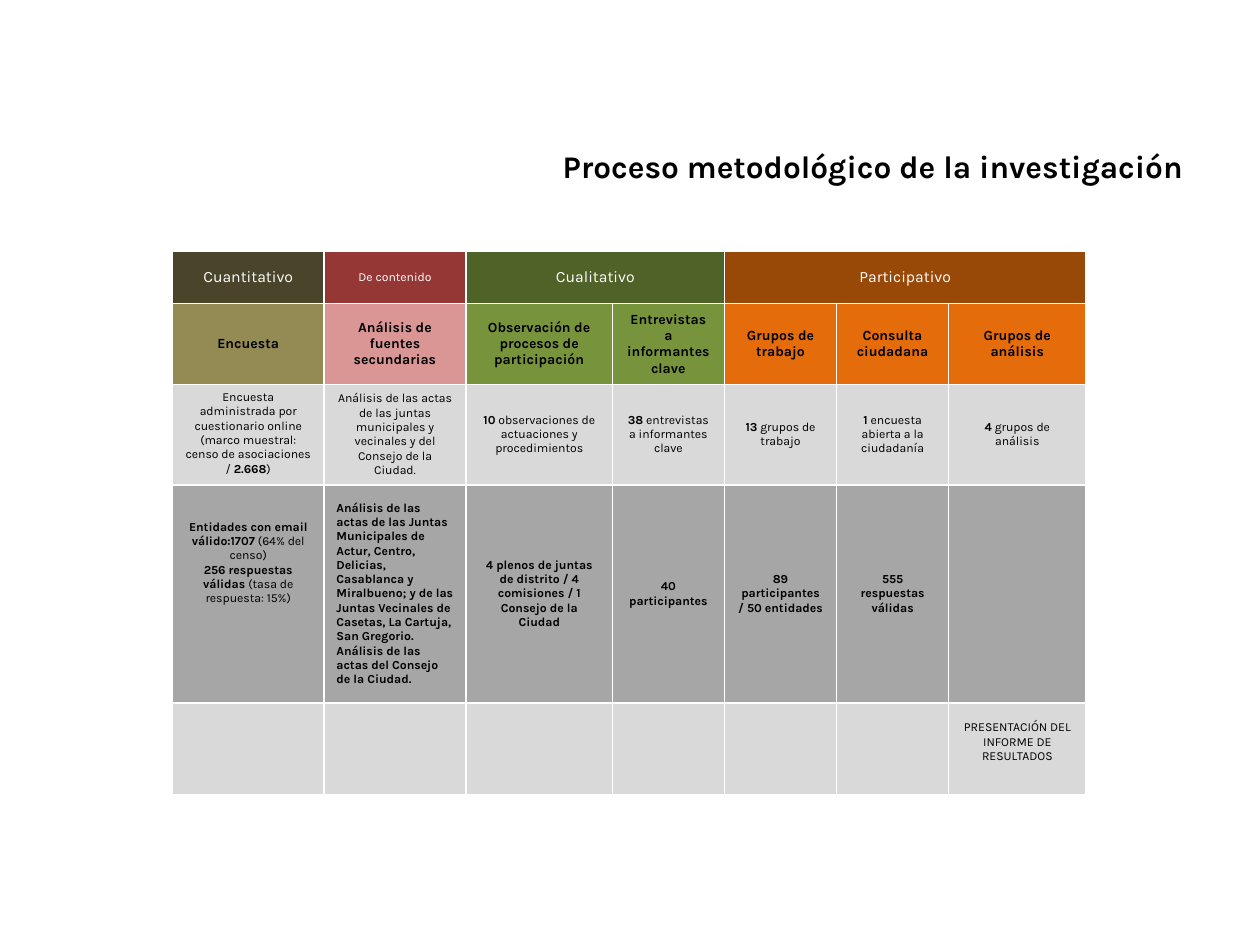
"""Build the slide on the methodological process of the research."""
from dataclasses import dataclass
from itertools import accumulate

from lxml.etree import SubElement
from pptx import Presentation
from pptx.dml.color import RGBColor
from pptx.enum.text import MSO_ANCHOR as Anchor, MSO_AUTO_SIZE as AutoSize, PP_ALIGN as Align
from pptx.oxml.ns import qn
from pptx.util import Inches, Pt


@dataclass(frozen=True)
class Theme:
    font: str = "Karla"
    ink: str = "000000"
    white: str = "FFFFFF"
    light: str = "D9D9D9"
    dark: str = "A6A6A6"
    title: int = 18
    phase: int = 9
    method: int = 8
    body: int = 7
    border: int = 1


@dataclass(frozen=True)
class Entry:
    text: str = ""
    fill: str = Theme.light
    size: int = Theme.body
    color: str = Theme.ink
    align: Align = Align.CENTER
    anchor: Anchor = Anchor.MIDDLE
    margin_top: float = 0.05
    margin_bottom: float = 0.05
    span: int = 1


THEME = Theme()
COLUMNS = (1.2, 1.13, 1.16, 0.89, 0.89, 0.89, 1.09)
ROWS = (0.42, 0.64, 0.79, 1.73, 0.73)


def phase(text: str, fill: str, span: int = 1, size: int = THEME.phase) -> Entry:
    return Entry(text, fill, size, THEME.white, span=span)


def method(text: str, fill: str) -> Entry:
    return Entry(f"*{text}*", fill, THEME.method)


def result(text: str, **layout) -> Entry:
    return Entry(text, THEME.dark, **layout)


ENTRIES = (
    (
        phase("Cuantitativo", "4A452A"),
        phase("De contenido", "953735", size=THEME.body),
        phase("Cualitativo", "4F6228", span=2),
        phase("Participativo", "984807", span=3),
    ),
    (
        method("Encuesta", "948A54"),
        method("Análisis de fuentes secundarias", "D99694"),
        method("Observación de procesos de participación", "77933C"),
        method("Entrevistas a informantes clave", "77933C"),
        method("Grupos de trabajo", "E46C0A"),
        method("Consulta ciudadana", "E46C0A"),
        method("Grupos de análisis", "E46C0A"),
    ),
    (
        Entry("Encuesta administrada por cuestionario online (marco muestral: "
              "censo de asociaciones / *2.668*)", anchor=Anchor.TOP),
        Entry("Análisis de las actas de las juntas municipales y vecinales y del "
              "Consejo de la Ciudad."),
        Entry("*10* observaciones de actuaciones y procedimientos"),
        Entry("*38* entrevistas a informantes clave"),
        Entry("*13* grupos de trabajo"),
        Entry("*1 *encuesta abierta a la ciudadanía"),
        Entry("*4* grupos de análisis"),
    ),
    (
        result("*Entidades con email válido:1707 *(64% del censo)\n"
               "*256 respuestas válidas *(tasa de respuesta: 15%)",
               anchor=Anchor.TOP, margin_top=0.28),
        result("*Análisis de las actas de las Juntas Municipales de Actur, Centro, "
               "Delicias, Casablanca y Miralbueno; y de las Juntas Vecinales de "
               "Casetas, La Cartuja, San Gregorio. Análisis de las actas del "
               "Consejo de la Ciudad.*", align=Align.LEFT),
        result("*4 plenos de juntas de distrito / 4 comisiones / 1 Consejo de la Ciudad*"),
        result("*40 participantes*"),
        result("*89 participantes / 50 entidades*"),
        result("*555 respuestas válidas*"),
        result(""),
    ),
    (Entry(),) * 6 + (Entry("PRESENTACIÓN DEL INFORME DE RESULTADOS", margin_bottom=0.16),),
)


def assign(target, values: dict) -> None:
    for name, value in values.items():
        setattr(target, name, value)


def write(para, text: str, size: int, color: str, align: Align) -> None:
    """Write text in which asterisks enclose the bold parts."""
    para.alignment = align
    for index, part in enumerate(text.split("*")):
        if part:
            span = para.add_run()
            span.text = part
            assign(span.font, {"name": THEME.font, "size": Pt(size), "bold": index % 2 == 1})
            span.font.color.rgb = RGBColor.from_string(color)


def paint(cell, fill: str) -> None:
    properties = cell._tc.get_or_add_tcPr()
    for side in ("lnL", "lnR", "lnT", "lnB"):
        line = SubElement(properties, qn(f"a:{side}"), w=str(Pt(THEME.border)))
        SubElement(SubElement(line, qn("a:solidFill")), qn("a:srgbClr"), val=THEME.white)
    cell.fill.solid()
    cell.fill.fore_color.rgb = RGBColor.from_string(fill)


def fill_row(table, row: int, entries: tuple[Entry, ...]) -> None:
    starts = accumulate((entry.span for entry in entries), initial=0)
    for column, entry in zip(starts, entries):
        cell = table.cell(row, column)
        for offset in range(entry.span):
            paint(table.cell(row, column + offset), entry.fill)
        if entry.span > 1:
            cell.merge(table.cell(row, column + entry.span - 1))
        assign(cell, {
            "vertical_anchor": entry.anchor,
            "margin_top": Inches(entry.margin_top),
            "margin_bottom": Inches(entry.margin_bottom),
        })
        frame = cell.text_frame
        for index, text in enumerate(entry.text.split("\n")):
            para = frame.add_paragraph() if index else frame.paragraphs[0]
            write(para, text, entry.size, entry.color, entry.align)
            para.font.size = Pt(entry.size)


def add_title(page) -> None:
    box = page.shapes.title
    assign(box, {"left": Inches(1.22), "top": Inches(0.97),
                 "width": Inches(8.27), "height": Inches(0.49)})
    assign(box.text_frame, {"word_wrap": True, "vertical_anchor": Anchor.TOP,
                            "auto_size": AutoSize.SHAPE_TO_FIT_TEXT})
    para = box.text_frame.paragraphs[0]
    write(para, "*Proceso metodológico de la investigación*", THEME.title, THEME.ink, Align.RIGHT)
    assign(para, {"line_spacing": 1.5, "space_before": Pt(0)})


def add_process_table(page) -> None:
    table = page.shapes.add_table(
        len(ROWS), len(COLUMNS), Inches(1.37), Inches(1.99),
        Inches(sum(COLUMNS)), Inches(sum(ROWS)),
    ).table
    for column, width in zip(table.columns, COLUMNS):
        column.width = Inches(width)
    for index, (height, entries) in enumerate(zip(ROWS, ENTRIES)):
        table.rows[index].height = Inches(height)
        fill_row(table, index, entries)


def main() -> None:
    deck = Presentation()
    assign(deck, {"slide_width": Inches(10), "slide_height": Inches(7.5)})
    page = deck.slides.add_slide(deck.slide_layouts[5])
    add_title(page)
    add_process_table(page)
    deck.save("out.pptx")


if __name__ == "__main__":
    main()
